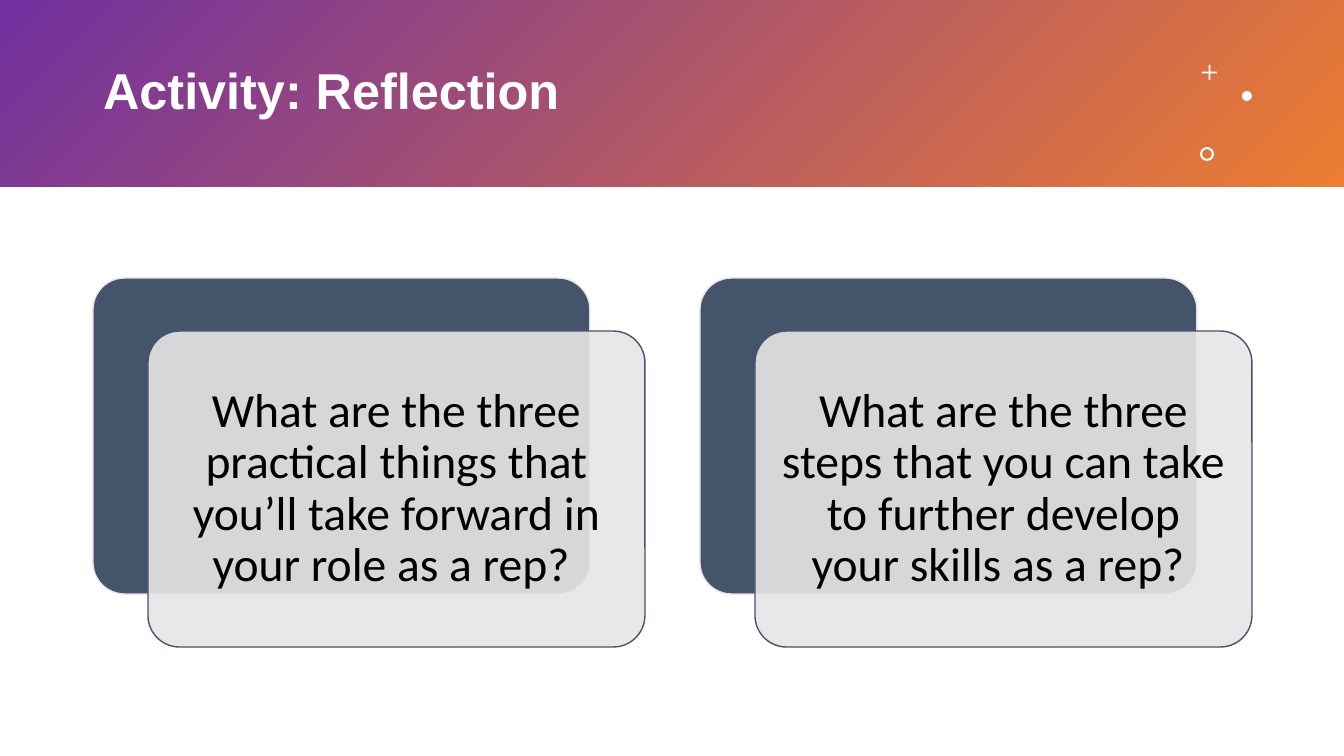
from pptx import Presentation
from pptx.dml.color import RGBColor
from pptx.enum.shapes import MSO_SHAPE as Kind
from pptx.enum.text import MSO_ANCHOR as Anchor, MSO_AUTO_SIZE as Fit, PP_ALIGN as Align
from pptx.oxml.ns import qn
from pptx.util import Emu, Pt
from lxml.etree import SubElement

SCALE = 914400 / 100.8
WIDE, HIGH = 1344, 756


def px(n):
    return Emu(round(n * SCALE))


def tint(code):
    return RGBColor.from_string(code)


def write(frame, text, *, font, size, color, bold=False, align=Align.LEFT, inset=None):
    frame.word_wrap = True
    frame.auto_size = Fit.NONE
    frame.vertical_anchor = Anchor.MIDDLE
    if inset is not None:
        frame.margin_left = frame.margin_right = px(inset)
        frame.margin_top = frame.margin_bottom = px(inset)
    frame.text = text
    para = frame.paragraphs[0]
    para.alignment = align
    para.line_spacing = 0.9
    face = para.runs[0].font
    face.name, face.size, face.bold = font, Pt(size), bold
    face.color.rgb = tint(color)


class Deck:
    white, slate, pale = "FFFFFF", "44546A", "E7E6E6"
    start, end = "7030A0", "ED7D31"
    head, body = "Arial", "Calibri"

    def __init__(self):
        self.file = Presentation()
        self.file.slide_width, self.file.slide_height = px(WIDE), px(HIGH)
        self.slide = self.file.slides.add_slide(self.file.slide_layouts[5])

    def shape(self, kind, x, y, w, h, fill=None, line=None, adj=None, alpha=None):
        item = self.slide.shapes.add_shape(kind, px(x), px(y), px(w), px(h))
        item.shadow.inherit = False
        if fill:
            item.fill.solid()
            item.fill.fore_color.rgb = tint(fill)
        if alpha is not None:
            color = item.element.spPr.find(qn("a:solidFill"))[0]
            SubElement(color, qn("a:alpha")).set("val", str(alpha * 1000))
        if line:
            item.line.color.rgb = tint(line)
            item.line.width = Pt(1)
        else:
            item.line.fill.background()
        if adj is not None:
            item.adjustments[0] = adj
        return item

    def band(self, h):
        item = self.shape(Kind.RECTANGLE, 0, 0, WIDE, h)
        item.fill.gradient()
        item.fill.gradient_angle = 315
        for stop, code in zip(item.fill.gradient_stops, (self.start, self.end)):
            stop.color.rgb = tint(code)
        self.slide.shapes.title.element.addprevious(item.element)

    def title(self, text, x, y, w, h):
        item = self.slide.shapes.title
        item.left, item.top, item.width, item.height = map(px, (x, y, w, h))
        write(item.text_frame, text, font=self.head, size=36, color=self.white, bold=True)

    def mark(self, kind, x, y, size, adj=None):
        self.shape(kind, x, y, size, size, self.white, adj=adj)

    def card(self, text, x, y):
        w, h = 497, 316
        self.shape(Kind.ROUNDED_RECTANGLE, x, y, w, h, self.slate, self.pale, 0.1)
        front = self.shape(Kind.ROUNDED_RECTANGLE, x + 55, y + 53, w, h,
                           self.pale, self.slate, 0.1, 90)
        write(front.text_frame, text, font=self.body, size=34, color="000000",
              align=Align.CENTER, inset=14)

    def save(self):
        self.file.save("out.pptx")


def main():
    deck = Deck()
    deck.band(187)
    deck.title("Activity: Reflection", 93, 33, 1084, 153 - 33)
    deck.mark(Kind.CROSS, 1202, 65, 15, 0.44)
    deck.mark(Kind.OVAL, 1242, 91, 10)
    deck.mark(Kind.DONUT, 1200, 147, 14, 0.15)
    asks = (
        "What are the three practical things that you’ll take forward in your role as a rep? ",
        "What are the three steps that you can take to further develop your skills as a rep? ",
    )
    for i, ask in enumerate(asks):
        deck.card(ask, 93 + 607 * i, 278)
    deck.save()


if __name__ == "__main__":
    main()
